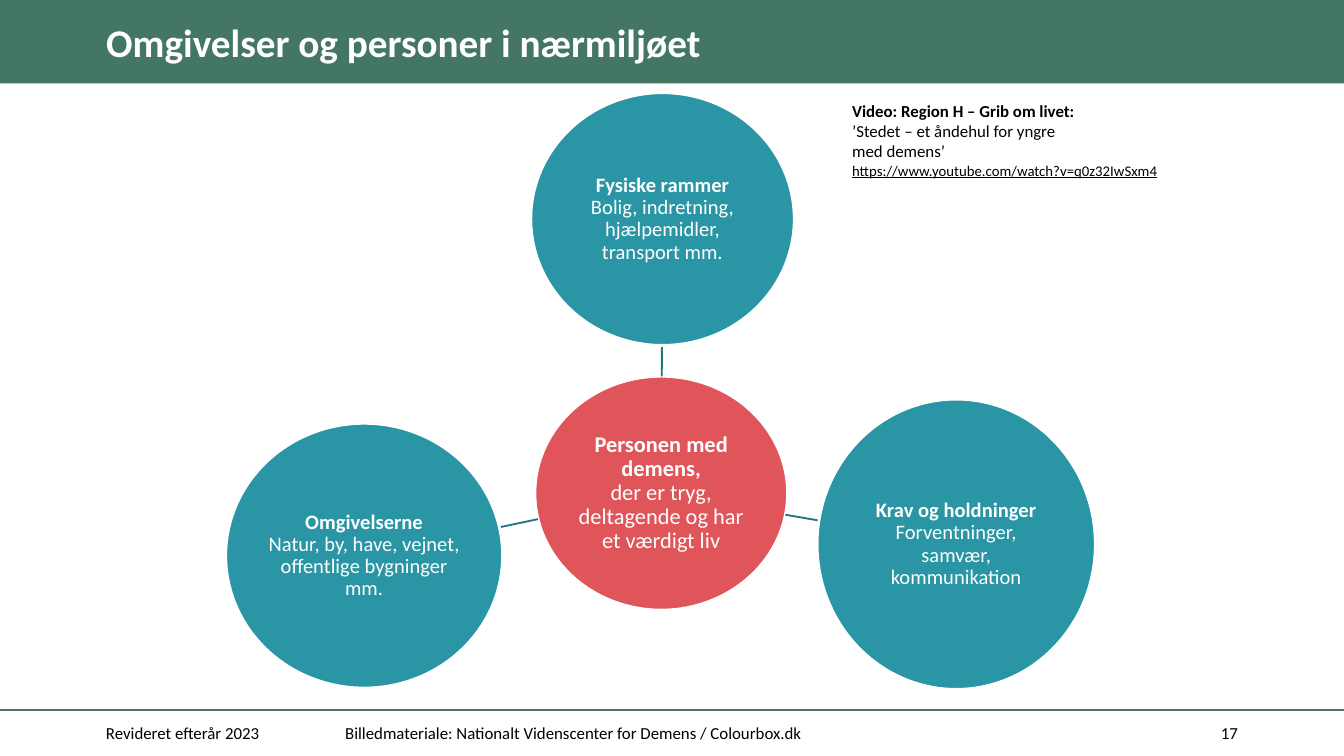
from math import hypot

from lxml.etree import SubElement
from pptx import Presentation
from pptx.dml.color import RGBColor
from pptx.enum.shapes import MSO_CONNECTOR, MSO_SHAPE
from pptx.enum.text import MSO_ANCHOR, MSO_AUTO_SIZE, PP_ALIGN
from pptx.oxml.ns import qn
from pptx.util import Inches, Pt

GREEN = RGBColor(0x43, 0x77, 0x63)
TEAL = RGBColor(0x29, 0x95, 0xA5)
DARK_TEAL = RGBColor(0x21, 0x77, 0x84)
RED = RGBColor(0xE0, 0x55, 0x5A)
WHITE = RGBColor(0xFF, 0xFF, 0xFF)
BLACK = RGBColor(0, 0, 0)
FONT = "Calibri"

# Boxes are (left, top, width, height) in inches
CENTRE = ((3.98, 2.8, 1.88, 1.74), RED, 12, "Personen med demens,",
          "der er tryg, deltagende og har et værdigt liv")
SATELLITES = [
    ((3.95, 0.69, 1.96, 1.88), TEAL, 11, "Fysiske rammer",
     "Bolig, indretning, hjælpemidler, transport mm."),
    ((6.08, 2.97, 2.07, 2.16), TEAL, 11, "Krav og holdninger",
     "Forventninger, samvær, kommunikation"),
    ((1.68, 3.15, 2.06, 1.97), TEAL, 11, "Omgivelserne",
     "Natur, by, have, vejnet, offentlige bygninger mm."),
]


def add_run(paragraph, text, size, color, bold=False, underline=False):
    run = paragraph.add_run()
    run.text = text
    font = run.font
    font.name, font.size, font.bold = FONT, Pt(size), bold
    font.color.rgb = color
    if underline:
        font.underline = True


def set_frame(frame, anchor, insets):
    frame.word_wrap = True
    frame.auto_size = MSO_AUTO_SIZE.NONE
    frame.vertical_anchor = anchor
    (frame.margin_left, frame.margin_top,
     frame.margin_right, frame.margin_bottom) = map(Inches, insets)


def add_text_box(slide, box, anchor=MSO_ANCHOR.MIDDLE, insets=(0.1, 0.05, 0.1, 0.05)):
    frame = slide.shapes.add_textbox(*map(Inches, box)).text_frame
    set_frame(frame, anchor, insets)
    return frame.paragraphs[0]


def add_line(slide, start, end, color):
    line = slide.shapes.add_connector(
        MSO_CONNECTOR.STRAIGHT, *map(Inches, (*start, *end)))
    line.line.color.rgb = color
    line.line.width = Pt(1)
    SubElement(line.element.spPr, qn("a:effectLst"))


def add_header(slide, box):
    left, top, width, height = box
    band = slide.shapes.add_shape(MSO_SHAPE.RECTANGLE, *map(Inches, box))
    band.shadow.inherit = False
    band.fill.solid()
    band.fill.fore_color.rgb = GREEN
    band.line.fill.background()

    # The title lies in front of the band
    title = slide.shapes.title
    title.element.addprevious(band.element)
    title.left, title.top = Inches(left + 0.69), Inches(top + 0.11)
    title.width, title.height = Inches(width - 2.56), Inches(height - 0.18)
    set_frame(title.text_frame, MSO_ANCHOR.MIDDLE, (0.1, 0, 0, 0))
    paragraph = title.text_frame.paragraphs[0]
    paragraph.alignment = PP_ALIGN.LEFT
    paragraph.line_spacing = 0.9
    add_run(paragraph, "Omgivelser og personer i nærmiljøet", 21, WHITE, bold=True)


def middle(box):
    left, top, width, height = box
    return left + width / 2, top + height / 2


def edge_point(box, target):
    """Point where the ellipse in the box meets the ray from its middle to the target."""
    x, y = middle(box)
    dx, dy = target[0] - x, target[1] - y
    scale = 1 / hypot(dx / (box[2] / 2), dy / (box[3] / 2))
    return x + dx * scale, y + dy * scale


def add_circle(slide, box, color, size, heading, body):
    circle = slide.shapes.add_shape(MSO_SHAPE.OVAL, *map(Inches, box))
    circle.shadow.inherit = False
    circle.fill.solid()
    circle.fill.fore_color.rgb = color
    circle.line.color.rgb = WHITE
    circle.line.width = Pt(1.5)
    set_frame(circle.text_frame, MSO_ANCHOR.MIDDLE, (0.01,) * 4)
    paragraph = circle.text_frame.paragraphs[0]
    paragraph.alignment = PP_ALIGN.CENTER
    paragraph.line_spacing = 0.9
    add_run(paragraph, heading, size, WHITE, bold=True)
    paragraph.add_line_break()
    add_run(paragraph, body, size, WHITE)


def add_diagram(slide, centre, satellites):
    add_circle(slide, *centre)
    for satellite in satellites:
        start = edge_point(centre[0], middle(satellite[0]))
        end = edge_point(satellite[0], middle(centre[0]))
        add_line(slide, start, end, DARK_TEAL)
        add_circle(slide, *satellite)


def add_video_note(slide, box):
    paragraph = add_text_box(slide, box, MSO_ANCHOR.TOP, (0.07, 0.05, 0.1, 0.05))
    add_run(paragraph, "Video: Region H – Grib om livet:", 9, BLACK, bold=True)
    for text in ("’Stedet – et åndehul for yngre", "med demens’"):
        paragraph.add_line_break()
        add_run(paragraph, text, 9, BLACK)
    paragraph.add_line_break()
    add_run(paragraph, "https://www.youtube.com/watch?v=q0z32IwSxm4", 7.9, BLACK,
            underline=True)


def add_footer(slide, box):
    left, top, width, height = box
    add_line(slide, (left, top), (left + width, top), GREEN)
    for offset, text_width, text, alignment in (
        (0.69, 1.68, "Revideret efterår 2023", PP_ALIGN.LEFT),
        (2.47, 6.3, "Billedmateriale: Nationalt Videnscenter for Demens / Colourbox.dk",
         PP_ALIGN.LEFT),
        (8.85, 0.46, "17", PP_ALIGN.RIGHT),
    ):
        paragraph = add_text_box(
            slide, (left + offset, top + 0.02, text_width, height - 0.04))
        paragraph.alignment = alignment
        add_run(paragraph, text, 9, BLACK)


def main():
    presentation = Presentation()
    # Widescreen, 16:9
    presentation.slide_width = Inches(10)
    presentation.slide_height = Inches(10 * 9 / 16)
    slide = presentation.slides.add_slide(presentation.slide_layouts[5])
    add_header(slide, (0, 0, 10, 0.62))
    add_diagram(slide, CENTRE, SATELLITES)
    add_video_note(slide, (6.27, 0.7, 2.49, 0.67))
    add_footer(slide, (0, 5.28, 10, 0.34))
    presentation.save("out.pptx")


if __name__ == "__main__":
    main()
